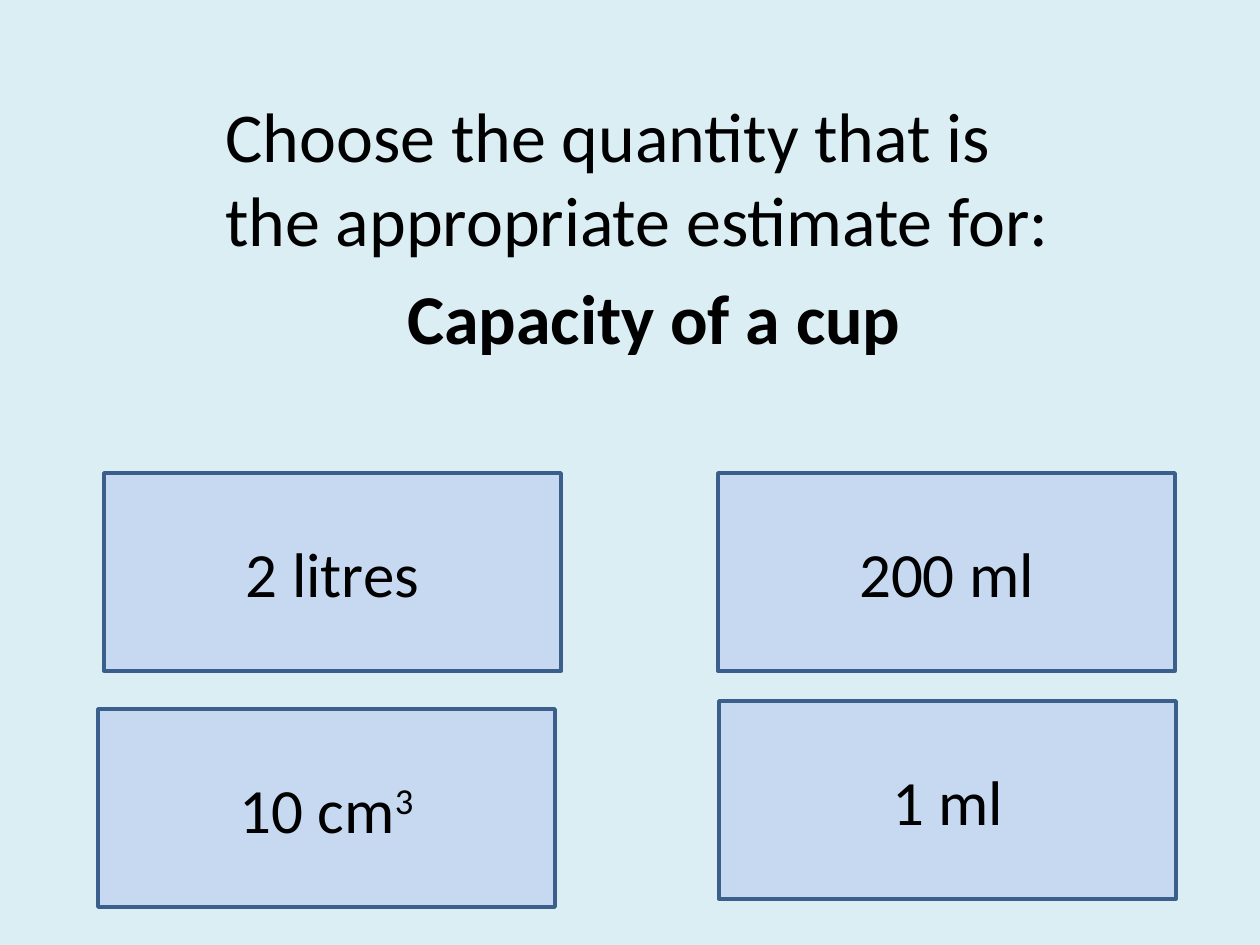
import dataclasses

import pptx
import pptx.dml.color
import pptx.enum.shapes
import pptx.enum.text
import pptx.util


@dataclasses.dataclass(frozen=True)
class Theme:
    background: str = "DBEEF4"
    card: str = "C6D9F1"
    border: str = "3A5F8C"
    ink: str = "000000"
    font: str = "Calibri"
    question_size: int = 40
    answer_size: int = 36
    border_width: int = 2
    paragraph_gap: int = 8


class Deck:
    """Draw styled elements on the current slide, in px."""

    def __init__(self, theme, width, height, px_per_inch):
        self.theme = theme
        self.scale = pptx.util.Inches(1) / px_per_inch
        self.prs = pptx.Presentation()
        self.prs.slide_width, self.prs.slide_height = self.emu(width, height)

    def emu(self, *lengths):
        return [pptx.util.Emu(round(n * self.scale)) for n in lengths]

    def color(self, value):
        return pptx.dml.color.RGBColor.from_string(value)

    def slide(self):
        self.s = self.prs.slides.add_slide(self.prs.slide_layouts[6])
        fill = self.s.background.fill
        fill.solid()
        fill.fore_color.rgb = self.color(self.theme.background)

    def run(self, p, text, size, bold=False, superscript=False):
        r = p.add_run()
        r.text = text
        r.font.name = self.theme.font
        r.font.size = pptx.util.Pt(size)
        r.font.bold = bold
        r.font.color.rgb = self.color(self.theme.ink)
        if superscript:
            r.font._element.set("baseline", "30000")

    def question(self, box, prompt, subject):
        tf = self.s.shapes.add_textbox(*self.emu(*box)).text_frame
        tf.word_wrap = True
        self.run(tf.paragraphs[0], prompt, self.theme.question_size)
        p = tf.add_paragraph()
        p.alignment = pptx.enum.text.PP_ALIGN.CENTER
        p.space_before = pptx.util.Pt(self.theme.paragraph_gap)
        self.run(p, subject, self.theme.question_size, bold=True)

    def answer(self, box, text, exponent=""):
        sp = self.s.shapes.add_shape(
            pptx.enum.shapes.MSO_SHAPE.RECTANGLE, *self.emu(*box))
        sp.shadow.inherit = False
        sp.fill.solid()
        sp.fill.fore_color.rgb = self.color(self.theme.card)
        sp.line.color.rgb = self.color(self.theme.border)
        sp.line.width = pptx.util.Pt(self.theme.border_width)
        tf = sp.text_frame
        tf.word_wrap = True
        tf.vertical_anchor = pptx.enum.text.MSO_ANCHOR.MIDDLE
        p = tf.paragraphs[0]
        p.alignment = pptx.enum.text.PP_ALIGN.CENTER
        self.run(p, text, self.theme.answer_size)
        if exponent:
            self.run(p, exponent, self.theme.answer_size, superscript=True)


def main():
    deck = Deck(Theme(), 1260, 945, 126)
    deck.slide()
    card_size = (457, 198)
    answers = [
        (718, 473, "200 ml"),
        (104, 473, "2 litres"),
        (719, 701, "1 ml"),
        (98, 709, "10 cm", "3"),
    ]
    for left, top, *words in answers:
        deck.answer((left, top, *card_size), *words)
    deck.question(
        (213, 86, 882, 309),
        "Choose the quantity that is the appropriate estimate for:",
        "Capacity of a cup",
    )
    deck.prs.save("out.pptx")


if __name__ == "__main__":
    main()
